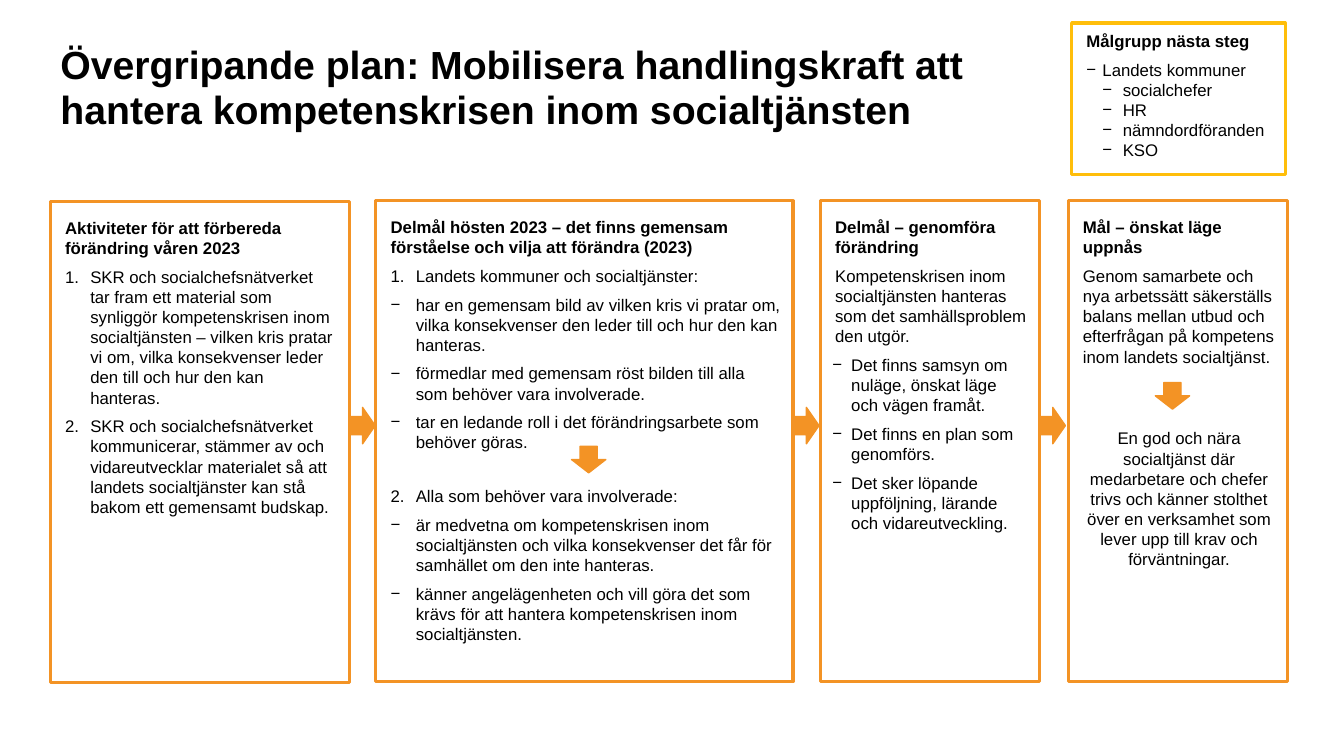
from lxml import etree
from pptx import Presentation
from pptx.dml.color import RGBColor
from pptx.enum import shapes, text
from pptx.oxml.ns import qn
from pptx.util import Pt

ORANGE = RGBColor(0xF3, 0x93, 0x25)
YELLOW = RGBColor(0xFF, 0xBE, 0x0A)
BLACK = RGBColor(0, 0, 0)
FONT = "Arial"

TITLE = ("Övergripande plan: Mobilisera handlingskraft att hantera "
         "kompetenskrisen inom socialtjänsten")

# Paragraph style: (left margin, first-line indent, bullet, level, alignment)
LEFT, CENTER = text.PP_ALIGN.LEFT, text.PP_ALIGN.CENTER
STYLES = {
    "head": (2, 0, None, 0, LEFT),
    "plain": (2, 0, None, 0, LEFT),
    "center": (2, 0, None, 0, CENTER),
    "number": (20, -18, "1", 0, LEFT),
    "number 2": (20, -18, "2", 0, LEFT),
    "dash": (20, -18, "−", 0, LEFT),
    "narrow dash": (13.5, -13.5, "−", 0, LEFT),
    "group": (13.5, -11.5, "−", 0, LEFT),
    "role": (28, -14.5, "−", 1, LEFT),
}

# Paragraph: (style, space after, text)
TARGET_GROUP = [
    ("head", 6, "Målgrupp nästa steg"),
    ("group", 0, "Landets kommuner"),
    ("role", 0, "socialchefer"),
    ("role", 0, "HR"),
    ("role", 0, "nämndordföranden"),
    ("role", 0, "KSO"),
]

# Step: (left, top, width, paragraphs)
STEPS = [
    (36, 144, 213.5, [
        ("head", 6, "Aktiviteter för att förbereda förändring våren 2023"),
        ("number", 6, "SKR och socialchefsnätverket tar fram ett material som synliggör "
         "kompetenskrisen inom socialtjänsten – vilken kris pratar vi om, vilka "
         "konsekvenser leder den till och hur den kan hanteras."),
        ("number", 6, "SKR och socialchefsnätverket kommunicerar, stämmer av och "
         "vidareutvecklar materialet så att landets socialtjänster kan stå bakom "
         "ett gemensamt budskap."),
    ]),
    (268.5, 143.5, 298, [
        ("head", 6, "Delmål hösten 2023 – det finns gemensam förståelse och vilja "
         "att förändra (2023)"),
        ("number", 6, "Landets kommuner och socialtjänster:"),
        ("dash", 6, "har en gemensam bild av vilken kris vi pratar om, vilka "
         "konsekvenser den leder till och hur den kan hanteras."),
        ("dash", 6, "förmedlar med gemensam röst bilden till alla som behöver vara "
         "involverade."),
        ("dash", 24, "tar en ledande roll i det förändringsarbete som behöver göras."),
        ("number 2", 6, "Alla som behöver vara involverade:"),
        ("dash", 6, "är medvetna om kompetenskrisen inom socialtjänsten och vilka "
         "konsekvenser det får för samhället om den inte hanteras."),
        ("dash", 6, "känner angelägenheten och vill göra det som krävs för att hantera "
         "kompetenskrisen inom socialtjänsten."),
    ]),
    (586, 143.5, 156.5, [
        ("head", 6, "Delmål – genomföra förändring"),
        ("plain", 6, "Kompetenskrisen inom socialtjänsten hanteras som det "
         "samhällsproblem den utgör."),
        ("narrow dash", 6, "Det finns samsyn om nuläge, önskat läge och vägen framåt."),
        ("narrow dash", 6, "Det finns en plan som genomförs."),
        ("narrow dash", 12, "Det sker löpande uppföljning, lärande och vidareutveckling."),
    ]),
    (763, 143.5, 156.5, [
        ("head", 6, "Mål – önskat läge uppnås"),
        ("plain", 44, "Genom samarbete och nya arbetssätt säkerställs balans mellan "
         "utbud och efterfrågan på kompetens inom landets socialtjänst."),
        ("center", 12, "En god och nära socialtjänst där medarbetare och chefer trivs "
         "och känner stolthet över en verksamhet som lever upp till krav och "
         "förväntningar."),
    ]),
]
STEP_HEIGHT = 343.5
ARROW_TOP, ARROW_W, ARROW_H = 291, 18, 26
DOWN_ARROWS = [(828, 270.5), (411, 316)]  # left, top before the quarter turn
DOWN_W, DOWN_H = 19, 24.5


def style_font(font, size, bold):
    font.name, font.size, font.bold = FONT, Pt(size), bold
    font.color.rgb = BLACK


def set_bullet(p, margin, indent, bullet):
    pPr = p._p.get_or_add_pPr()
    pPr.set("marL", str(Pt(margin)))
    pPr.set("indent", str(Pt(indent)))
    if bullet is None:
        etree.SubElement(pPr, qn("a:buNone"))
    elif bullet.isdigit():
        etree.SubElement(pPr, qn("a:buFont"), typeface="+mj-lt")
        etree.SubElement(pPr, qn("a:buAutoNum"), type="arabicPeriod", startAt=bullet)
    else:
        etree.SubElement(pPr, qn("a:buFont"), typeface=FONT)
        etree.SubElement(pPr, qn("a:buChar"), char=bullet)


def add_box(s, left, top, width, height, color, inset_top, paragraphs):
    sp = s.shapes.add_shape(shapes.MSO_SHAPE.RECTANGLE,
                            Pt(left), Pt(top), Pt(width), Pt(height))
    sp.shadow.inherit = False
    sp.fill.background()
    sp.line.color.rgb, sp.line.width = color, Pt(2.25)
    tf = sp.text_frame
    tf.word_wrap = True
    tf.vertical_anchor = text.MSO_ANCHOR.TOP
    tf.margin_left = tf.margin_right = Pt(8.5)
    tf.margin_top, tf.margin_bottom = Pt(inset_top), Pt(inset_top / 2)
    for i, (style, after, words) in enumerate(paragraphs):
        p = tf.add_paragraph() if i else tf.paragraphs[0]
        margin, indent, bullet, level, align = STYLES[style]
        p.text = words
        set_bullet(p, margin, indent, bullet)
        p.level, p.alignment = level, align
        p.space_before, p.space_after = Pt(0), Pt(after)
        style_font(p.runs[0].font, 12, style == "head")


def add_arrow(s, left, top, width, height, rotation=0):
    sp = s.shapes.add_shape(shapes.MSO_SHAPE.RIGHT_ARROW,
                            Pt(left), Pt(top), Pt(width), Pt(height))
    sp.shadow.inherit = False
    sp.rotation = rotation
    sp.fill.solid()
    sp.fill.fore_color.rgb = sp.line.color.rgb = ORANGE
    sp.line.width = Pt(1)


def add_title(s):
    sp = s.shapes.title
    sp.left, sp.top, sp.width, sp.height = Pt(36), Pt(27.5), Pt(675.5), Pt(97)
    tf = sp.text_frame
    tf.text = TITLE
    tf.word_wrap = True
    tf.auto_size = text.MSO_AUTO_SIZE.NONE
    tf.vertical_anchor = text.MSO_ANCHOR.TOP
    p = tf.paragraphs[0]
    p.alignment, p.line_spacing = LEFT, 0.95
    style_font(p.runs[0].font, 28, True)


def main():
    prs = Presentation()
    prs.slide_width, prs.slide_height = Pt(960), Pt(540)
    s = prs.slides.add_slide(prs.slide_layouts[5])
    add_title(s)
    add_box(s, 765.5, 16.5, 152.5, 108, YELLOW, 5.5, TARGET_GROUP)
    for left, top, width, paragraphs in STEPS:
        add_box(s, left, top, width, STEP_HEIGHT, ORANGE, 11.5, paragraphs)
    for left, _, width, _ in STEPS[:-1]:
        add_arrow(s, left + width + 0.5, ARROW_TOP, ARROW_W, ARROW_H)
    for left, top in DOWN_ARROWS:
        add_arrow(s, left, top, DOWN_W, DOWN_H, 90)
    prs.save("out.pptx")


if __name__ == "__main__":
    main()
